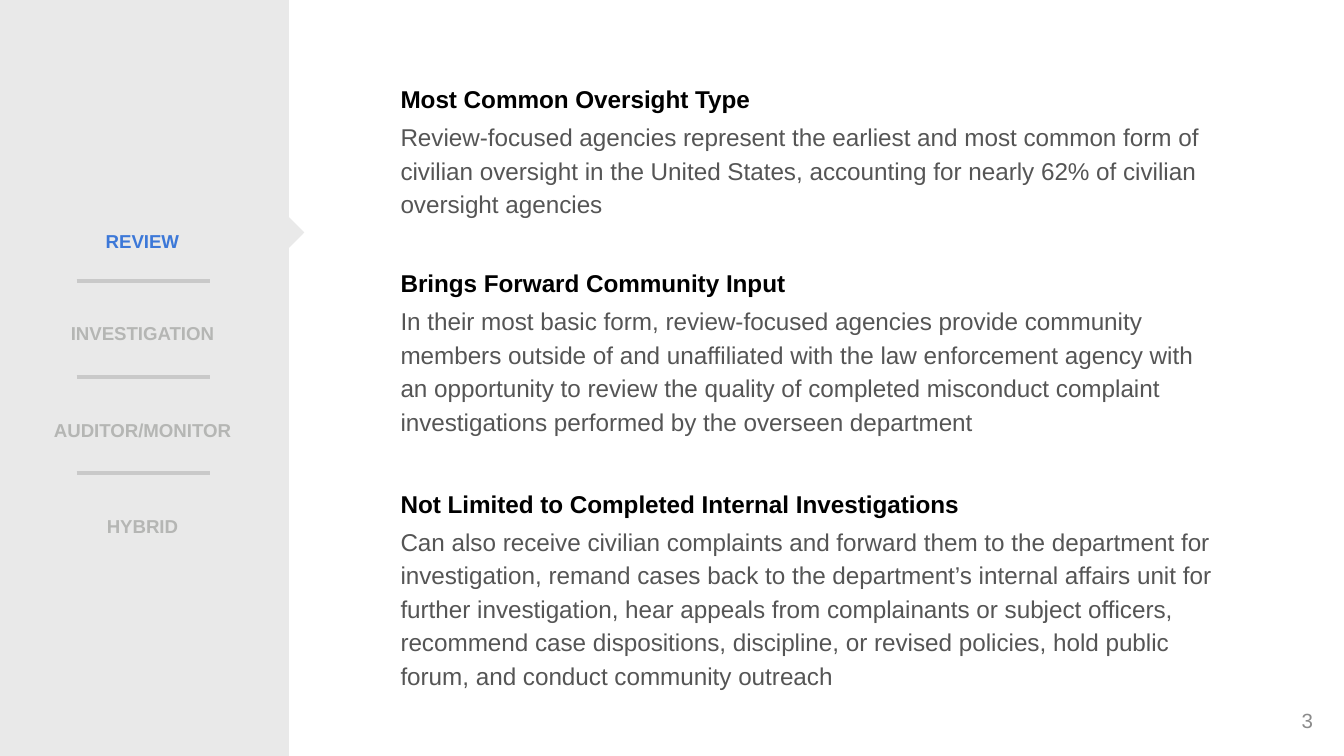
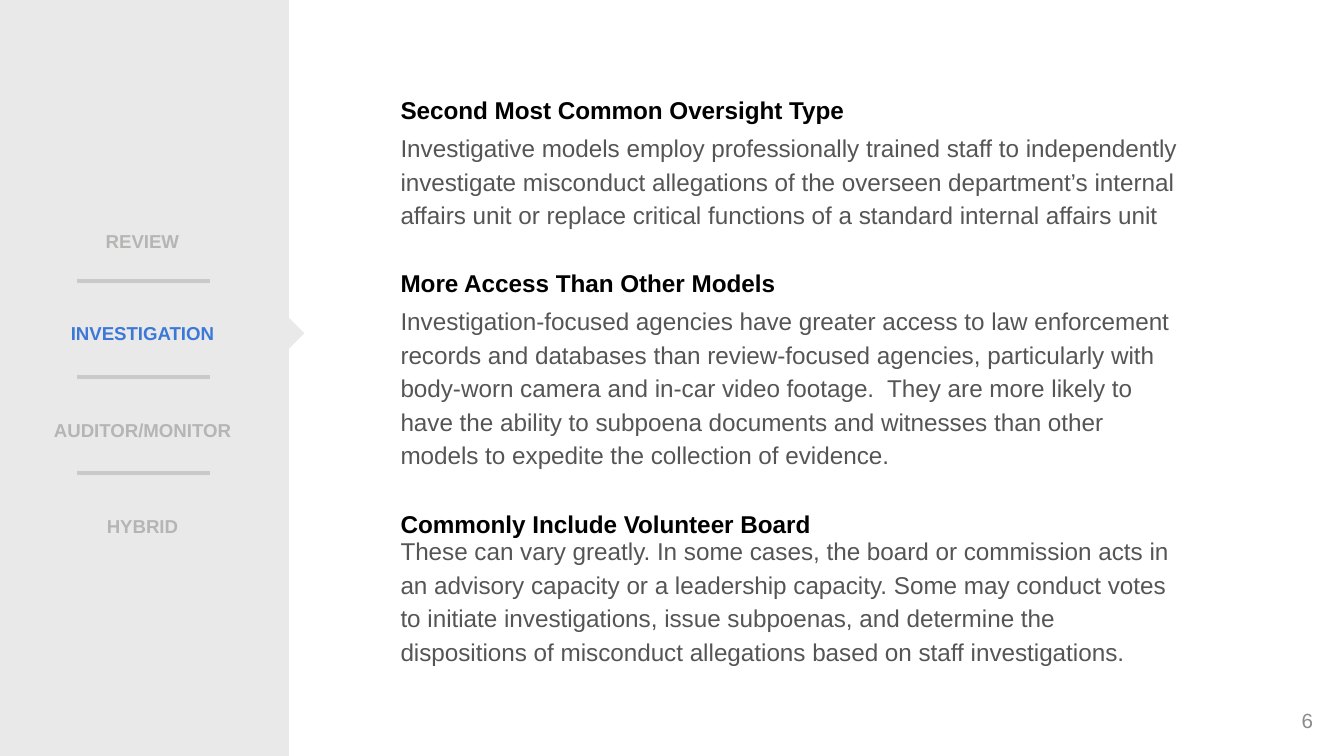
from lxml import etree
from pptx import Presentation
from pptx.dml.color import RGBColor
from pptx.enum import shapes, text
from pptx.oxml.ns import qn
from pptx.util import Pt

FONT = "Arial"
COLORS = {
    "panel": "E9E9E9",
    "rule": "C9C9C9",
    "active": "3C78D8",
    "inactive": "B5B6B4",
    "heading": "000000",
    "body": "555555",
    "number": "8B8B8B",
}
SLIDE_W, SLIDE_H = 720, 405
PANEL_W = 154.8
MARKER = 11.5
NAV_TOPS = {"REVIEW": 115.2, "INVESTIGATION": 164.9,
            "AUDITOR/MONITOR": 216.7, "HYBRID": 267.8}
RULE_TOP, RULE_PITCH = 150.5, 51.5
CONTENT_LEFT = 211.7
HEADING_W, HEADING_H = 310.3, 24.5
BODY_GAP = 25.9
TEXT_INSETS = (2.9, 1.4, 2.9, 1.4)
NAV_INSETS = (0, 2.9, 2.9, 2.9)

# Each block: heading top, gap from heading to body, body height, heading, body
SLIDES = [
    {
        "active": "REVIEW", "marker_top": 118.8, "number": "3", "body_w": 440,
        "blocks": [
            (36, BODY_GAP, 48.2, "Most Common Oversight Type",
             "Review-focused agencies represent the earliest and most common "
             "form of civilian oversight in the United States, accounting for "
             "nearly 62% of civilian oversight agencies"),
            (134.6, BODY_GAP, 77, "Brings Forward Community Input",
             "In their most basic form, review-focused agencies provide "
             "community members outside of and unaffiliated with the law "
             "enforcement agency with an opportunity to review the quality of "
             "completed misconduct complaint investigations performed by the "
             "overseen department"),
            (252.7, BODY_GAP, 106.6,
             "Not Limited to Completed Internal Investigations",
             "Can also receive civilian complaints and forward them to the "
             "department for investigation, remand cases back to the "
             "department’s internal affairs unit for further investigation, "
             "hear appeals from complainants or subject officers, recommend "
             "case dispositions, discipline, or revised policies, hold public "
             "forum, and conduct community outreach"),
        ],
    },
    {
        "active": "INVESTIGATION", "marker_top": 172.8, "number": "6",
        "body_w": 427,
        "blocks": [
            (41.8, BODY_GAP, 79.2, "Second Most Common Oversight Type",
             "Investigative models employ professionally trained staff to "
             "independently investigate misconduct allegations of the overseen "
             "department’s internal affairs unit or replace critical functions "
             "of a standard internal affairs unit"),
            (134.6, BODY_GAP, 101.5, "More Access Than Other Models",
             "Investigation-focused agencies have greater access to law "
             "enforcement records and databases than review-focused agencies, "
             "particularly with body-worn camera and in-car video footage.  "
             "They are more likely to have the ability to subpoena documents "
             "and witnesses than other models to expedite the collection of "
             "evidence."),
            (263.5, 20.2, 48.2, "Commonly Include Volunteer Board",
             "These can vary greatly. In some cases, the board or commission "
             "acts in an advisory capacity or a leadership capacity. Some may "
             "conduct votes to initiate investigations, issue subpoenas, and "
             "determine the dispositions of misconduct allegations based on "
             "staff investigations."),
        ],
    },
]


def rgb(name):
    return RGBColor.from_string(COLORS[name])


def add_text(s, box, words, size, color, bold=False, spacing=1.0,
             align=text.PP_ALIGN.LEFT, anchor=text.MSO_ANCHOR.TOP,
             insets=TEXT_INSETS):
    """Add a one-paragraph text box; box is left, top, width, height."""
    tf = s.shapes.add_textbox(*map(Pt, box)).text_frame
    tf.word_wrap = True
    tf.vertical_anchor = anchor
    (tf.margin_left, tf.margin_top,
     tf.margin_right, tf.margin_bottom) = map(Pt, insets)
    tf.text = words
    p = tf.paragraphs[0]
    p.alignment = align
    p.line_spacing = spacing
    r = p.runs[0]
    r.font.name = FONT
    r.font.size = Pt(size)
    r.font.bold = bold
    r.font.color.rgb = rgb(color)


def add_panel_rect(s, left, top, width, height, rotation=0):
    sp = s.shapes.add_shape(shapes.MSO_SHAPE.RECTANGLE,
                            *map(Pt, (left, top, width, height)))
    sp.rotation = rotation
    sp.shadow.inherit = False
    sp.fill.solid()
    sp.fill.fore_color.rgb = rgb("panel")
    sp.line.fill.background()


def add_rule(s, top):
    ln = s.shapes.add_connector(shapes.MSO_CONNECTOR.STRAIGHT,
                                Pt(41), Pt(top), Pt(112.5), Pt(top))
    ln.line.color.rgb = rgb("rule")
    ln.line.width = Pt(2.25)
    etree.SubElement(ln._element.spPr, qn("a:effectLst"))


def add_sidebar(s, active, marker_top):
    add_panel_rect(s, 0, 0, PANEL_W, SLIDE_H)
    add_panel_rect(s, 149.2, marker_top, MARKER, MARKER, rotation=45)
    for i in range(len(NAV_TOPS) - 1):
        add_rule(s, RULE_TOP + i * RULE_PITCH)
    for label, top in NAV_TOPS.items():
        add_text(s, (25.2, top, 105.1, 21.6), label, 10,
                 "active" if label == active else "inactive",
                 bold=True, spacing=1.5, align=text.PP_ALIGN.CENTER,
                 anchor=text.MSO_ANCHOR.MIDDLE, insets=NAV_INSETS)


def add_block(s, body_w, top, gap, body_h, heading, body):
    add_text(s, (CONTENT_LEFT, top, HEADING_W, HEADING_H), heading, 13,
             "heading", bold=True, spacing=1.5)
    add_text(s, (CONTENT_LEFT, top + gap, body_w, body_h), body, 13,
             "body", spacing=1.15)


def add_page_number(s, number):
    add_text(s, (544.3, 375.1, 162, 21.6), number, 11, "number",
             align=text.PP_ALIGN.RIGHT, anchor=text.MSO_ANCHOR.MIDDLE)


def main():
    prs = Presentation()
    prs.slide_width, prs.slide_height = Pt(SLIDE_W), Pt(SLIDE_H)
    for content in SLIDES:
        s = prs.slides.add_slide(prs.slide_layouts[6])
        add_sidebar(s, content["active"], content["marker_top"])
        for block in content["blocks"]:
            add_block(s, content["body_w"], *block)
        add_page_number(s, content["number"])
    prs.save("out.pptx")


if __name__ == "__main__":
    main()
